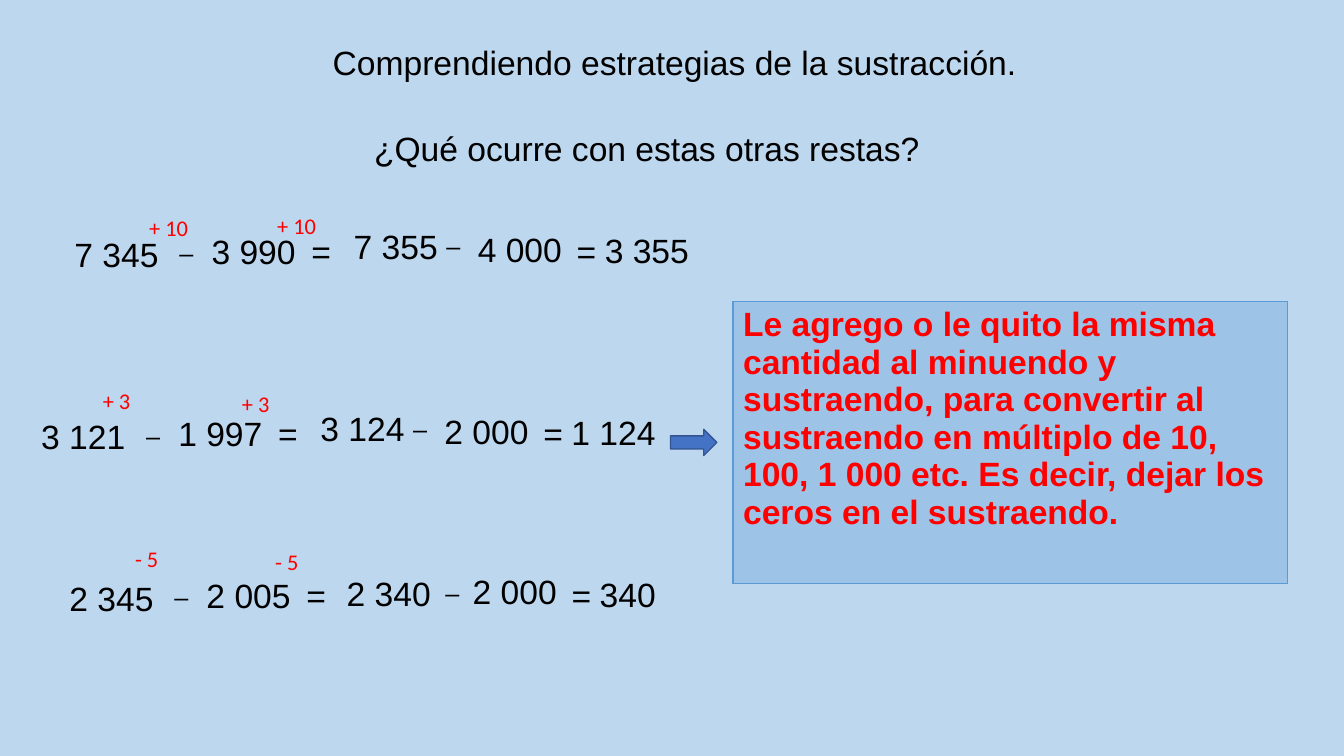
from lxml import etree
from pptx import Presentation
from pptx.dml.color import RGBColor
from pptx.enum.shapes import MSO_SHAPE
from pptx.enum.text import MSO_ANCHOR, PP_ALIGN
from pptx.oxml.ns import qn
from pptx.util import Pt

PX = 9144  # 100 px to the inch
RIGHT_ARROW = MSO_SHAPE.RIGHT_ARROW
TOP, BOTTOM = MSO_ANCHOR.TOP, MSO_ANCHOR.BOTTOM
CENTER = PP_ALIGN.CENTER

BACKGROUND = RGBColor(0xBD, 0xD7, 0xEE)
BLACK = RGBColor(0, 0, 0)
RED = RGBColor(0xFF, 0, 0)
ARROW_FILL = RGBColor(0x44, 0x72, 0xC4)
ARROW_LINE = RGBColor(0x32, 0x54, 0x91)
RULE_FILL = RGBColor(0x9D, 0xC3, 0xE6)
RULE_BORDER = RGBColor(0x5B, 0x9B, 0xD5)

NUMBER = {"name": "Arial", "size": Pt(24)}
MINUS = {"name": "Arial", "size": Pt(18)}
CHANGE = {"name": "Calibri", "size": Pt(16)}
RULE = {"name": "Arial", "size": Pt(24), "bold": True}

# Each part of a subtraction: x and y from its first number, width, height, format
PARTS = [
    (0, 0, 121, 50, NUMBER),
    (104, 4, 32, 40, MINUS),
    (136, -3, 104, 50, NUMBER),
    (235, -3, 32, 50, NUMBER),
    (277, -8, 109, 50, NUMBER),
    (369, -3, 32, 40, MINUS),
    (400, -5, 121, 50, NUMBER),
    (498, -3, 32, 50, NUMBER),
    (526, -4, 110, 50, NUMBER),
]

# Position, the four numbers and the result, the change and its two places, nudges
SUBTRACTIONS = [
    (64, 227, ("7 345", "3 990", "7 355", "4 000", "3 355"),
     "+ 10", [(121, 180), (248, 178)], {}),
    (31, 408, ("3 121", "1 997", "3 124", "2 000", "1 124"),
     "+ 3", [(75, 352), (213, 355)], {}),
    (59, 568, ("2 345", "2 005", "2 340", "2 000", "340"),
     "- 5", [(107, 508), (246, 511)], {4: (-2, 3), 5: (4, 3), 6: (0, -2)}),
]


def px(*lengths):
    return [length * PX for length in lengths]


def set_font(run, font_format, color):
    for name, value in font_format.items():
        setattr(run.font, name, value)
    run.font.color.rgb = color


def add_text(slide, box, text, font_format, color=BLACK, frame_format=None, paragraph_format=None):
    frame = slide.shapes.add_textbox(*px(*box)).text_frame
    frame.word_wrap = True
    for name, value in (frame_format or {}).items():
        setattr(frame, name, value)
    paragraph = frame.paragraphs[0]
    for name, value in (paragraph_format or {}).items():
        setattr(paragraph, name, value)
    run = paragraph.add_run()
    run.text = text
    set_font(run, font_format, color)


def add_change(slide, x, y, text):
    """Red label that sits low in its box, above a number."""
    frame_format = {
        "vertical_anchor": BOTTOM,
        "margin_left": 27 * PX,
        "margin_right": 0,
        "margin_bottom": 12 * PX,
    }
    add_text(slide, (x, y, 76, 71), text, CHANGE, RED, frame_format)


def add_subtraction(slide, left, top, numbers, change, change_places, nudges):
    for x, y in change_places:
        add_change(slide, x, y, change)
    first, second, new_first, new_second, result = numbers
    texts = [first, "–", second, "=", new_first, "–", new_second, "=", result]
    for index, (text, part) in enumerate(zip(texts, PARTS)):
        x, y, width, height, font_format = part
        dx, dy = nudges.get(index, (0, 0))
        add_text(slide, (left + x + dx, top + y + dy, width, height), text, font_format)


def add_arrow(slide, box):
    arrow = slide.shapes.add_shape(RIGHT_ARROW, *px(*box))
    arrow.shadow.inherit = False
    arrow.fill.solid()
    arrow.fill.fore_color.rgb = ARROW_FILL
    arrow.line.color.rgb = ARROW_LINE
    arrow.line.width = Pt(1)


def add_borders(cell, color, width):
    properties = cell._tc.get_or_add_tcPr()
    for side in ("a:lnL", "a:lnR", "a:lnT", "a:lnB"):
        line = etree.SubElement(properties, qn(side), w=str(width))
        fill = etree.SubElement(line, qn("a:solidFill"))
        etree.SubElement(fill, qn("a:srgbClr"), val=str(color))


def add_rule_table(slide, box, text):
    table = slide.shapes.add_table(1, 1, *px(*box)).table
    table.first_row = False
    table.horz_banding = False
    cell = table.cell(0, 0)
    add_borders(cell, RULE_BORDER, Pt(1))
    cell.fill.solid()
    cell.fill.fore_color.rgb = RULE_FILL
    cell.vertical_anchor = TOP
    run = cell.text_frame.paragraphs[0].add_run()
    run.text = text
    set_font(run, RULE, RED)


def main():
    presentation = Presentation()
    presentation.slide_width, presentation.slide_height = px(1333, 750)
    slide = presentation.slides.add_slide(presentation.slide_layouts[6])
    slide.background.fill.solid()
    slide.background.fill.fore_color.rgb = BACKGROUND

    add_text(slide, (308, 119, 667, 51), "¿Qué ocurre con estas otras restas?", NUMBER,
             paragraph_format={"alignment": CENTER, "line_spacing": 1.07, "space_after": Pt(8)})
    add_arrow(slide, (665, 426, 46, 26))
    for subtraction in SUBTRACTIONS:
        add_subtraction(slide, *subtraction)
    add_text(slide, (301, 37, 736, 50), "Comprendiendo estrategias de la sustracción.", NUMBER,
             paragraph_format={"alignment": CENTER})
    add_rule_table(slide, (727, 299, 550, 280),
                   "Le agrego o le quito la misma cantidad al minuendo y sustraendo, "
                   "para convertir al sustraendo en múltiplo de 10, 100, 1 000 etc. "
                   "Es decir, dejar los ceros en el sustraendo.")
    presentation.save("out.pptx")


if __name__ == "__main__":
    main()
